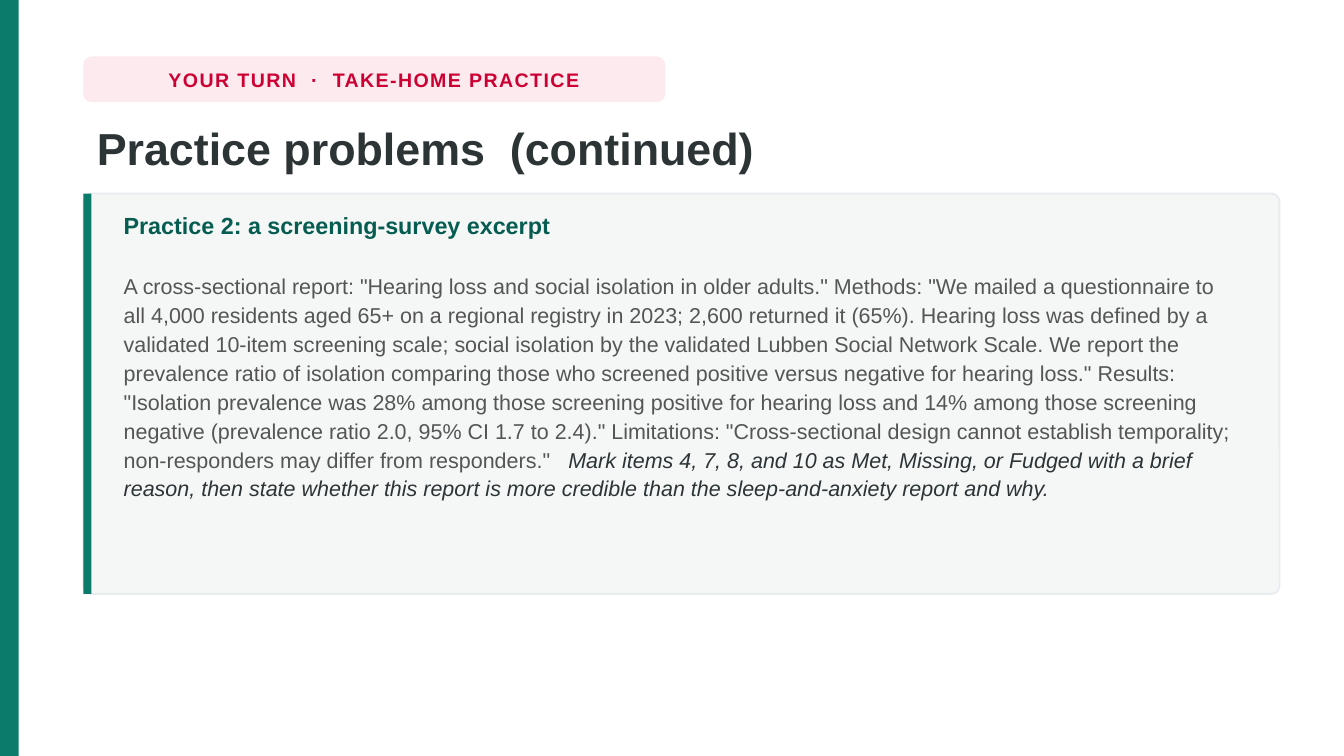
from lxml.etree import SubElement
from pptx import Presentation
from pptx.dml.color import RGBColor
from pptx.enum.shapes import MSO_SHAPE
from pptx.enum.text import MSO_ANCHOR, MSO_AUTO_SIZE, PP_ALIGN
from pptx.oxml.ns import qn
from pptx.util import Inches, Pt

# Grid of 500 columns on a 16:9 slide
COLS = 500
ROWS = COLS * 9 / 16
CELL = Inches(0.02)
LEFT, WIDE = 31, 445
FONT = "Arial"
HUES = {
    "page": "FFFFFF", "green": "0B7B6B", "deep": "065C50",
    "rose": "FDEAEF", "red": "CC0033", "ink": "2D3436",
    "grey": "555555", "card": "F4F7F6", "edge": "E8ECEE",
}


def hue(name):
    return RGBColor.from_string(HUES[name])


def scale(box):
    return [round(n * CELL) for n in box]


def place(shape, box):
    shape.left, shape.top, shape.width, shape.height = scale(box)


def block(slide, box, fill, kind=MSO_SHAPE.RECTANGLE, bend=None, edge=None):
    shape = slide.shapes.add_shape(kind, *scale(box))
    shape.shadow.inherit = False
    shape.fill.solid()
    shape.fill.fore_color.rgb = hue(fill)
    if bend is not None:
        shape.adjustments[0] = bend
    if edge:
        shape.line.color.rgb = hue(edge)
        shape.line.width = Pt(1)
    else:
        shape.line.fill.background()
    return shape


def write(para, text, size, color, bold=False, slant=False):
    run = para.add_run()
    run.text = text
    font = run.font
    font.name, font.size = FONT, Pt(size)
    font.bold, font.italic = bold, slant
    font.color.rgb = hue(color)
    return run


def add_tag(slide, box):
    tag = block(slide, box, "rose", MSO_SHAPE.ROUNDED_RECTANGLE, 0.18)
    frame = tag.text_frame
    frame.word_wrap = False
    frame.vertical_anchor = MSO_ANCHOR.MIDDLE
    para = frame.paragraphs[0]
    para.alignment = PP_ALIGN.CENTER
    run = write(para, "YOUR TURN  ·  TAKE-HOME PRACTICE", 10.5, "red", True)
    run.font._element.set("spc", "80")


def set_frame(frame):
    frame.word_wrap = True
    frame.auto_size = MSO_AUTO_SIZE.NONE
    frame.vertical_anchor = MSO_ANCHOR.TOP


def add_title(slide, box):
    title = slide.shapes.title
    place(title, box)
    set_frame(title.text_frame)
    para = title.text_frame.paragraphs[0]
    para.alignment = PP_ALIGN.LEFT
    para.line_spacing = 1.02
    write(para, "Practice problems  (continued)", 24, "ink", True)


def add_card(slide, box, parts):
    x, y, w, h = box
    block(slide, box, "card", MSO_SHAPE.ROUNDED_RECTANGLE, 0.02, "edge")
    block(slide, (x, y, 3, h), "green")

    # Body placeholder, raised above the card
    body = slide.placeholders[1]
    place(body, (x + 10, y + 4, w - 21, h - 8))
    tree = body.element.getparent()
    tree.append(body.element)
    frame = body.text_frame
    set_frame(frame)
    frame.margin_top = Inches(0.03)
    for i, runs in enumerate(parts):
        para = frame.add_paragraph() if i else frame.paragraphs[0]
        para.alignment = PP_ALIGN.LEFT
        para.line_spacing = 1.12
        para.space_before = Pt(16.5 if i else 0)
        props = para._p.get_or_add_pPr()
        props.set("marL", "0")
        props.set("indent", "0")
        SubElement(props, qn("a:buNone"))
        for run in runs:
            write(para, *run)


HEAD = "Practice 2: a screening-survey excerpt"
CASE = (
    'A cross-sectional report: "Hearing loss and social isolation in older '
    'adults." Methods: "We mailed a questionnaire to all 4,000 residents aged '
    '65+ on a regional registry in 2023; 2,600 returned it (65%). Hearing loss '
    'was defined by a validated 10-item screening scale; social isolation by '
    'the validated Lubben Social Network Scale. We report the prevalence ratio '
    'of isolation comparing those who screened positive versus negative for '
    'hearing loss." Results: "Isolation prevalence was 28% among those '
    'screening positive for hearing loss and 14% among those screening '
    'negative (prevalence ratio 2.0, 95% CI 1.7 to 2.4)." Limitations: '
    '"Cross-sectional design cannot establish temporality; non-responders may '
    'differ from responders."   '
)
TASK = (
    "Mark items 4, 7, 8, and 10 as Met, Missing, or Fudged with a brief "
    "reason, then state whether this report is more credible than the "
    "sleep-and-anxiety report and why."
)


def main():
    deck = Presentation()
    deck.slide_width, deck.slide_height = scale((COLS, ROWS))
    slide = deck.slides.add_slide(deck.slide_layouts[1])
    slide.background.fill.solid()
    slide.background.fill.fore_color.rgb = hue("page")

    # Side band, tag, title and card
    block(slide, (0, 0, 7, ROWS), "green")
    add_tag(slide, (LEFT, 21, 216.5, 17))
    add_title(slide, (LEFT, 42, WIDE, 28))
    add_card(slide, (LEFT, 72, WIDE, 149), [
        [(HEAD, 12.5, "deep", True)],
        [(CASE, 11.5, "grey"), (TASK, 11.5, "ink", False, True)],
    ])
    deck.save("out.pptx")


if __name__ == "__main__":
    main()
